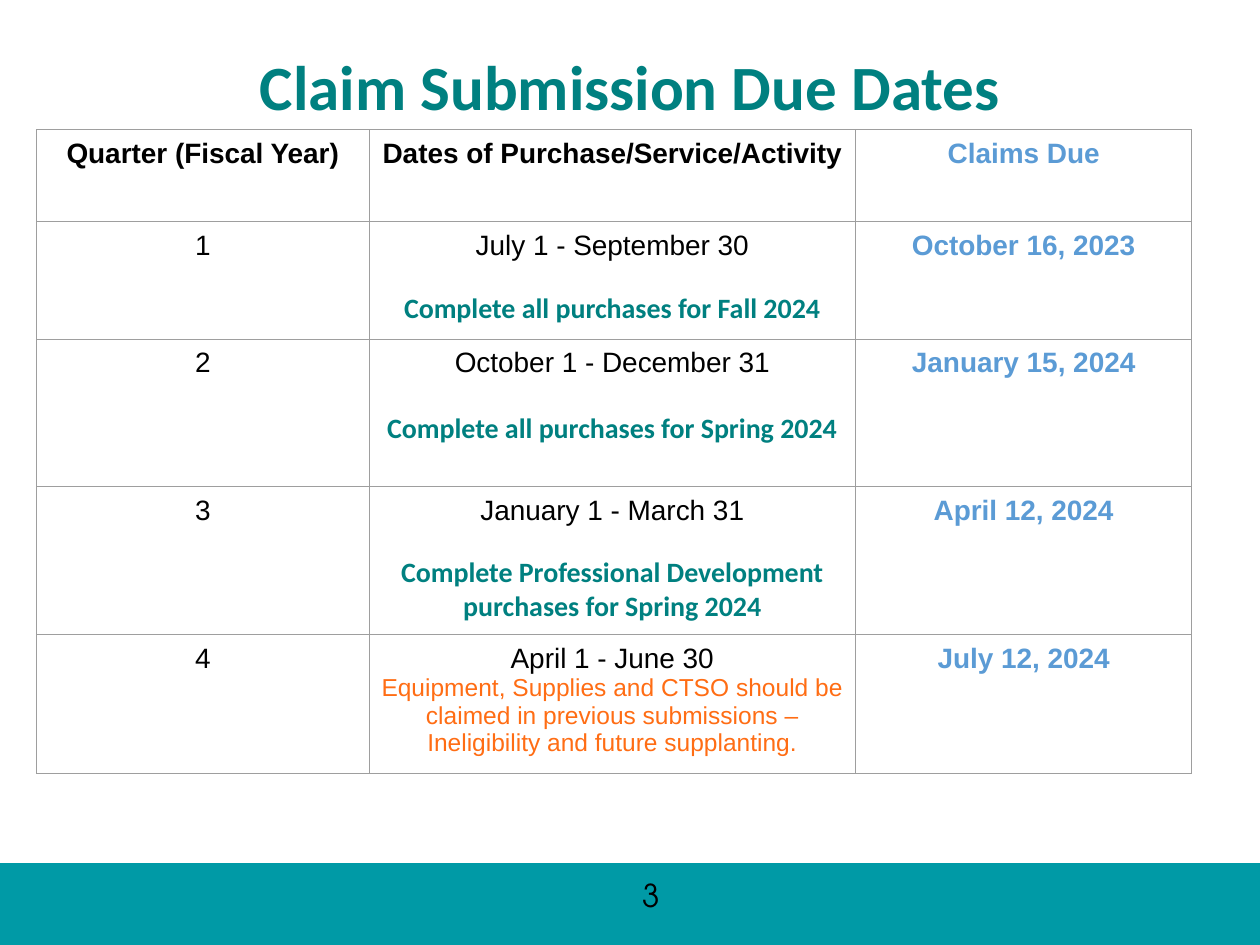
from lxml import etree
from pptx import Presentation
from pptx import util as u
from pptx.dml.color import RGBColor
from pptx.enum import shapes, text
from pptx.oxml.ns import qn

WIDE, HIGH = 10, 7.5
HUES = {"teal": "008080", "band": "009AA6", "blue": "5B9BD5",
        "warm": "FF6D14", "ink": "000000", "rule": "9E9E9E"}

# Column and row shares of the table, in inches
COLS = [2.64, 3.86, 2.67]
ROWS = [0.73, 0.93, 1.17, 1.17, 1.05]

HEADS = ["Quarter (Fiscal Year)", "Dates of Purchase/Service/Activity", "Claims Due"]
NOTE = {"font": "Calibri", "hue": "teal", "bold": True}
WARN = {"size": 14, "hue": "warm"}
# Dates, note, note style, gap above note, due date
TERMS = [
    ("July 1 - September 30", "Complete all purchases for Fall 2024",
     NOTE, 17, "October 16, 2023"),
    ("October 1 - December 31", "Complete all purchases for Spring 2024",
     NOTE, 19, "January 15, 2024"),
    ("January 1 - March 31",
     "Complete Professional Development purchases for Spring 2024",
     NOTE, 17, "April 12, 2024"),
    ("April 1 - June 30",
     "Equipment, Supplies and CTSO should be claimed in previous submissions – "
     "Ineligibility and future supplanting.", WARN, 0, "July 12, 2024"),
]


def tint(hue):
    return RGBColor.from_string(HUES[hue])


def span(x, y, w, h):
    """Turn shares of the slide into lengths."""
    return [u.Inches(v * full) for v, full in zip((x, y, w, h), (WIDE, HIGH) * 2)]


def write(par, words, size=16, font="Arial", hue="ink", bold=False):
    par.alignment = text.PP_ALIGN.CENTER
    run = par.add_run()
    run.text = words
    run.font.size = u.Pt(size)
    run.font.name = font
    run.font.bold = bold
    run.font.color.rgb = tint(hue)


def label(slide, box, words, **style):
    frame = slide.shapes.add_textbox(*span(*box)).text_frame
    frame.word_wrap = True
    frame.vertical_anchor = text.MSO_ANCHOR.MIDDLE
    write(frame.paragraphs[0], words, **style)
    return frame


def title(slide, box):
    frame = label(slide, box, "Claim Submission Due Dates",
                  size=36, font="Calibri", hue="teal", bold=True)
    frame.paragraphs[0].line_spacing = 0.9


def footer(slide, box):
    x, y, w, h = box
    band = slide.shapes.add_shape(shapes.MSO_SHAPE.RECTANGLE, *span(*box))
    band.shadow.inherit = False
    band.fill.solid()
    band.fill.fore_color.rgb = tint("band")
    band.line.fill.background()
    # Page number
    label(slide, (x + 0.404 * w, y + 0.08 * h, 0.225 * w, 0.62 * h), "3",
          size=18, font="TeX Gyre Adventor")


def frame_cell(cell):
    """Thin rules on all sides, even margins, no fill."""
    props = cell._tc.get_or_add_tcPr()
    for side in ("lnL", "lnR", "lnT", "lnB"):
        line = etree.SubElement(props, qn(f"a:{side}"), w=str(u.Pt(0.5)))
        fill = etree.SubElement(line, qn("a:solidFill"))
        etree.SubElement(fill, qn("a:srgbClr"), val=HUES["rule"])
    cell.fill.background()
    cell.margin_left = cell.margin_right = u.Inches(0.07)
    cell.margin_top = cell.margin_bottom = u.Inches(0.07)


def dues(slide, box):
    x, y, w, h = span(*box)
    grid = slide.shapes.add_table(len(ROWS), len(COLS), x, y, w, h).table
    grid.first_row = grid.horz_banding = False
    for col, part in zip(grid.columns, COLS):
        col.width = int(w * part / sum(COLS))
    for row, part in zip(grid.rows, ROWS):
        row.height = int(h * part / sum(ROWS))
    for cell in grid.iter_cells():
        frame_cell(cell)

    def first(r, c):
        return grid.cell(r, c).text_frame.paragraphs[0]

    # Header row
    for c, head in enumerate(HEADS):
        write(first(0, c), head, bold=True, hue="blue" if c == 2 else "ink")
    # One row for each quarter
    for r, (dates, note, style, gap, due) in enumerate(TERMS, 1):
        write(first(r, 0), str(r))
        write(first(r, 1), dates)
        par = grid.cell(r, 1).text_frame.add_paragraph()
        par.space_before = u.Pt(gap)
        write(par, note, **style)
        write(first(r, 2), due, hue="blue", bold=True)


def main():
    deck = Presentation()
    deck.slide_width, deck.slide_height = u.Inches(WIDE), u.Inches(HIGH)
    slide = deck.slides.add_slide(deck.slide_layouts[6])
    footer(slide, (0, 6.85 / HIGH, 1, 0.65 / HIGH))
    title(slide, (0.069, 0.4 / HIGH, 0.862, 0.63 / HIGH))
    dues(slide, (0.029, 1.03 / HIGH, sum(COLS) / WIDE, sum(ROWS) / HIGH))
    deck.save("out.pptx")


if __name__ == "__main__":
    main()
